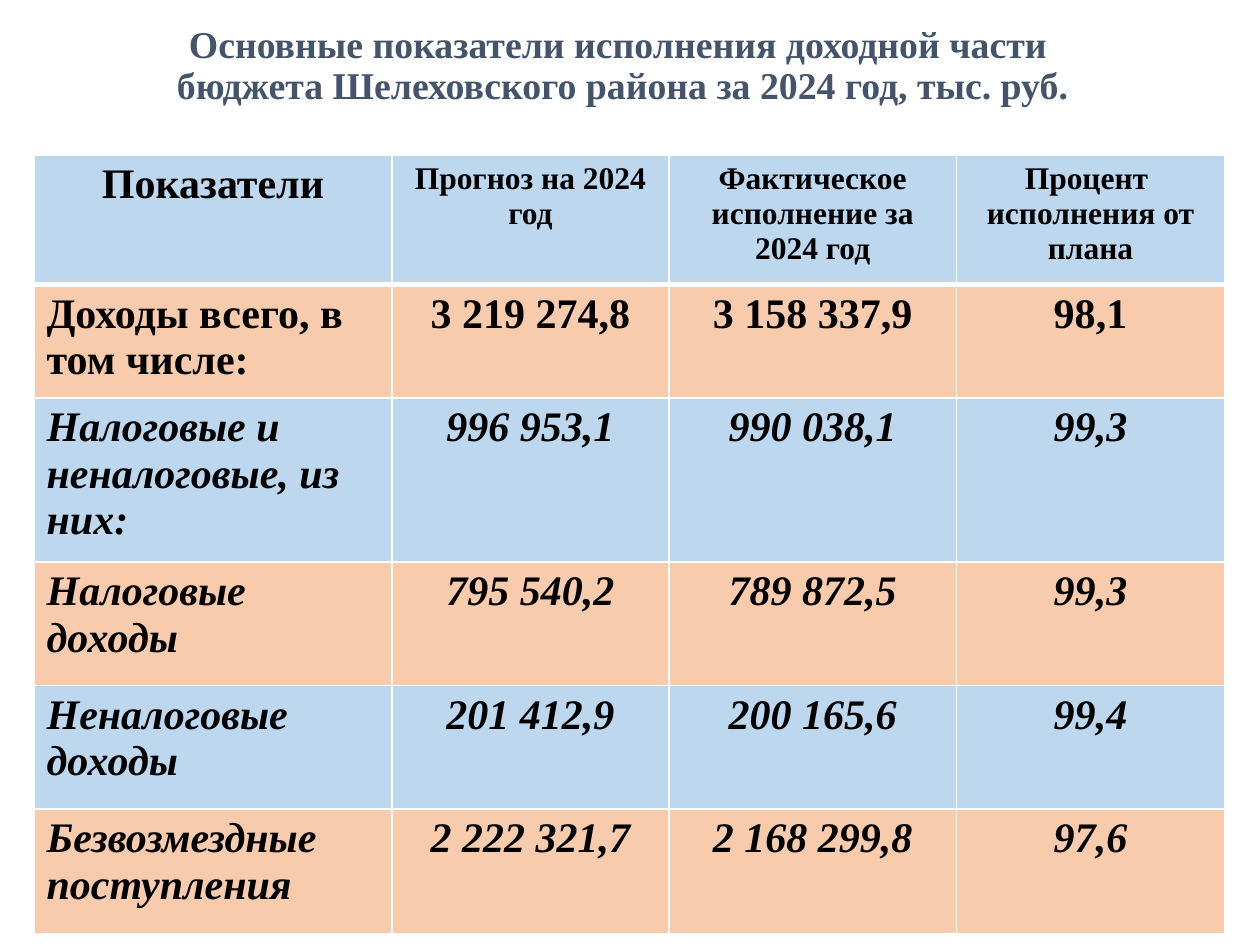
from lxml.etree import SubElement
from pptx import Presentation
from pptx.dml.color import RGBColor
from pptx.enum.text import MSO_ANCHOR, PP_ALIGN
from pptx.oxml.ns import qn
from pptx.util import Inches, Pt

FONT = "Times New Roman"
BLUE, PEACH, WHITE, BLACK, SLATE = "BDD7EE", "F8CBAD", "FFFFFF", "000000", "44546A"

TITLE_LINES = [
    "Основные показатели исполнения доходной части",
    " бюджета Шелеховского района за 2024 год, тыс. руб.",
]
COLUMN_WIDTHS = [2.84, 2.2, 2.28, 2.13]
ROW_HEIGHTS = [1.03, 0.86, 0.98, 0.98, 0.98, 0.99]
# A line feed inside a cell starts a new paragraph
BUDGET_ROWS = [
    ["Показатели", "Прогноз на 2024 год",
     "Фактическое\nисполнение за 2024 год", "Процент \nисполнения от плана"],
    ["Доходы всего, в том числе:", "3 219 274,8", "3 158 337,9", "98,1"],
    ["Налоговые и неналоговые, из них:", "996 953,1", "990 038,1", "99,3"],
    ["Налоговые доходы", "795 540,2", "789 872,5", "99,3"],
    ["Неналоговые\nдоходы", "201 412,9", "200 165,6", "99,4"],
    ["Безвозмездные\nпоступления", "2 222 321,7", "2 168 299,8", "97,6"],
]


def color(hex_value):
    return RGBColor.from_string(hex_value)


def add_run(paragraph, text, size, hex_value, italic=False):
    run = paragraph.add_run()
    run.text = text
    run.font.name = FONT
    run.font.size = Pt(size)
    run.font.bold = True
    run.font.italic = italic
    run.font.color.rgb = color(hex_value)


def add_title(slide):
    title = slide.shapes.add_textbox(Inches(0.43), Inches(0.29), Inches(8.95), Inches(0.79))
    frame = title.text_frame
    frame.word_wrap = True
    frame.vertical_anchor = MSO_ANCHOR.MIDDLE
    # The deep bottom inset lifts the two lines above the box centre
    frame.margin_top, frame.margin_bottom = 0, Inches(0.31)
    paragraph = frame.paragraphs[0]
    paragraph.alignment = PP_ALIGN.CENTER
    paragraph.line_spacing = 0.9
    for index, line in enumerate(TITLE_LINES):
        if index:
            paragraph.add_line_break()
        add_run(paragraph, line, 21.6, SLATE)


def set_borders(cell, top, bottom):
    properties = cell._tc.get_or_add_tcPr()
    sides = [("a:lnL", 1), ("a:lnR", 1), ("a:lnT", top), ("a:lnB", bottom)]
    for position, (tag, width) in enumerate(sides):
        border = SubElement(properties, qn(tag), w=str(Pt(width)))
        fill = SubElement(border, qn("a:solidFill"))
        SubElement(fill, qn("a:srgbClr"), val=WHITE)
        properties.insert(position, border)


def fill_cell(cell, text, row, column):
    cell.fill.solid()
    cell.fill.fore_color.rgb = color(PEACH if row % 2 else BLUE)
    set_borders(cell, top=3 if row == 1 else 1, bottom=3 if row == 0 else 1)
    size = 18 if row == 0 and column > 0 else 24
    centred = row == 0 or column > 0
    frame = cell.text_frame
    for index, line in enumerate(text.split("\n")):
        paragraph = frame.add_paragraph() if index else frame.paragraphs[0]
        paragraph.alignment = PP_ALIGN.CENTER if centred else PP_ALIGN.LEFT
        add_run(paragraph, line, size, BLACK, italic=row > 1)


def add_budget_table(slide):
    budget = slide.shapes.add_table(
        len(ROW_HEIGHTS), len(COLUMN_WIDTHS), Inches(0.27), Inches(1.23),
        Inches(sum(COLUMN_WIDTHS)), Inches(sum(ROW_HEIGHTS))).table
    for column, width in zip(budget.columns, COLUMN_WIDTHS):
        column.width = Inches(width)
    for row, height in zip(budget.rows, ROW_HEIGHTS):
        row.height = Inches(height)
    for row, texts in enumerate(BUDGET_ROWS):
        for column, text in enumerate(texts):
            fill_cell(budget.cell(row, column), text, row, column)


def main():
    presentation = Presentation()
    presentation.slide_width, presentation.slide_height = Inches(10), Inches(7.5)
    slide = presentation.slides.add_slide(presentation.slide_layouts[6])
    add_title(slide)
    add_budget_table(slide)
    presentation.save("out.pptx")


if __name__ == "__main__":
    main()
